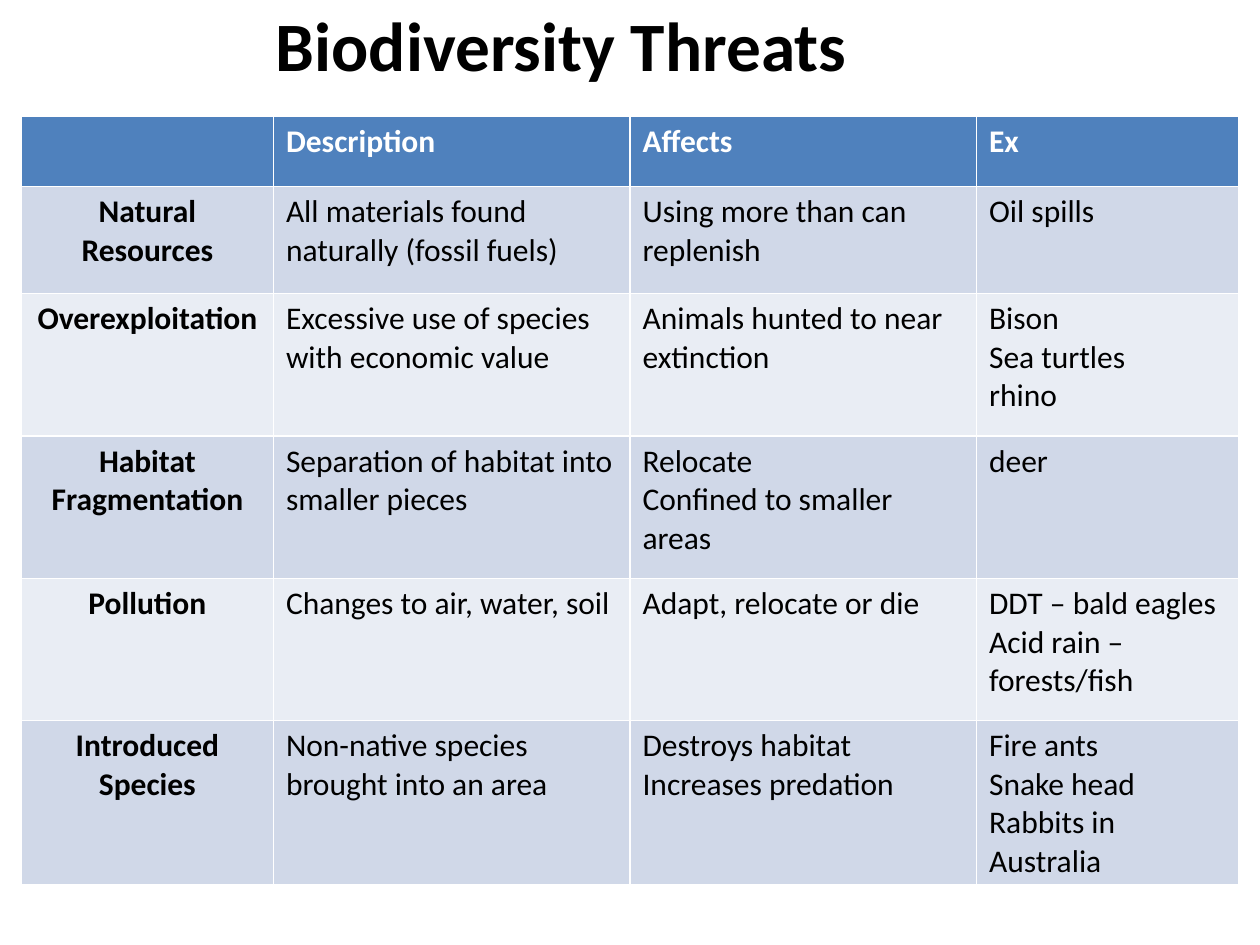
from pptx import Presentation, util as u
from pptx.dml.color import RGBColor
from pptx.enum import text

WHITE = RGBColor(0xFF, 0xFF, 0xFF)
BLACK = RGBColor(0, 0, 0)
BLUE = RGBColor(0x4F, 0x81, 0xBD)
BANDS = [RGBColor(0xD0, 0xD8, 0xE8), RGBColor(0xE9, 0xED, 0xF4)]
LEFT, MID = text.PP_ALIGN.LEFT, text.PP_ALIGN.CENTER


def write(frame, words, size=18, bold=False, color=BLACK, align=LEFT):
    frame.word_wrap = True
    frame.text = words
    for para in frame.paragraphs:
        para.alignment = align
        for run in para.runs:
            font = run.font
            font.name, font.size, font.bold = "Calibri", u.Pt(size), bold
            font.color.rgb = color


deck = Presentation()
deck.slide_width, deck.slide_height = u.Inches(10), u.Inches(7.5)
slide = deck.slides.add_slide(deck.slide_layouts[6])

title = slide.shapes.add_textbox(u.Inches(0.33), 0, u.Inches(8.25), u.Inches(0.7))
title.text_frame.vertical_anchor = text.MSO_ANCHOR.MIDDLE
write(title.text_frame, "Biodiversity Threats", size=39.6, bold=True, align=MID)

threats = [
    ["", "Description", "Affects", "Ex"],
    ["Natural\nResources", "All materials found naturally (fossil fuels)",
     "Using more than can replenish", "Oil spills"],
    ["Overexploitation", "Excessive use of species with economic value",
     "Animals hunted to near extinction", "Bison\nSea turtles\nrhino"],
    ["Habitat\nFragmentation", "Separation of habitat into smaller pieces",
     "Relocate\nConfined to smaller areas", "deer"],
    ["Pollution", "Changes to air, water, soil",
     "Adapt, relocate or die", "DDT – bald eagles\nAcid rain – forests/fish"],
    ["Introduced Species", "Non-native species brought into an area",
     "Destroys habitat\nIncreases predation",
     "Fire ants\nSnake head\nRabbits in Australia"],
]
wide = [2, 2.83, 2.75, 2.08]
high = [0.56, 0.85] + [1.13] * 4

grid = slide.shapes.add_table(
    len(high), len(wide), u.Inches(0.17), u.Inches(0.92),
    u.Inches(sum(wide)), u.Inches(sum(high))).table
for col, size in zip(grid.columns, wide):
    col.width = u.Inches(size)
for row, size in zip(grid.rows, high):
    row.height = u.Inches(size)

for r, row in enumerate(threats):
    for c, words in enumerate(row):
        cell = grid.cell(r, c)
        cell.fill.solid()
        cell.fill.fore_color.rgb = BANDS[(r - 1) % 2] if r else BLUE
        write(cell.text_frame, words, bold=r == 0 or c == 0,
              color=BLACK if r else WHITE, align=LEFT if c else MID)

deck.save("out.pptx")
